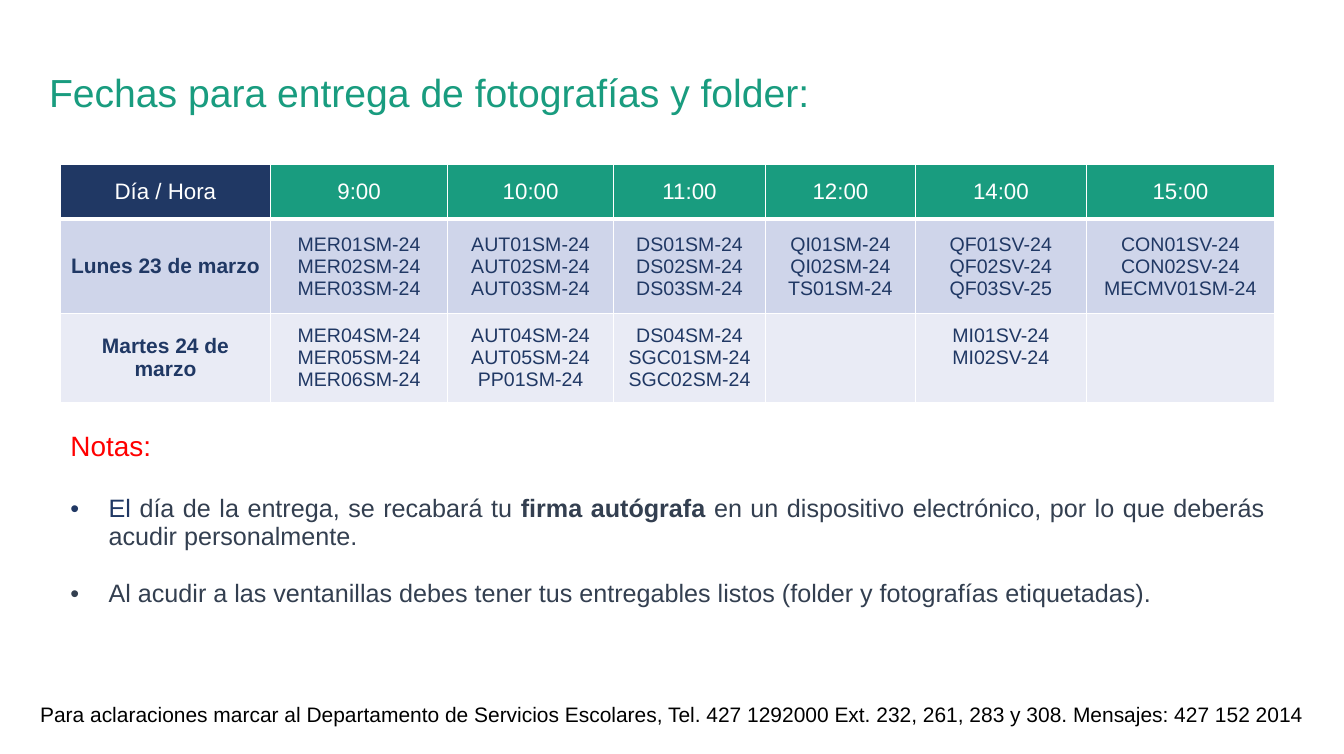
from dataclasses import dataclass

from pptx import Presentation
from pptx.dml.color import RGBColor
from pptx.enum.text import MSO_ANCHOR as Anchor, PP_ALIGN as Align
from pptx.oxml.ns import qn
from pptx.util import Inches, Pt
from lxml.etree import SubElement


@dataclass(frozen=True)
class Theme:
    font: str = "Arial"
    green: str = "199C7F"
    navy: str = "203864"
    slate: str = "333F50"
    red: str = "FF0000"
    black: str = "000000"
    white: str = "FFFFFF"
    bands: tuple = ("CFD5EA", "E9EBF5")
    title: int = 28
    heading: int = 20
    advice: int = 18
    hour: int = 16
    day: int = 15
    group: int = 14
    footer: int = 15


THEME = Theme()

COLUMN_WIDTHS = (2.09, 1.76, 1.65, 1.51, 1.49, 1.7, 1.87)
ROW_HEIGHTS = (0.54, 0.94, 0.88, 2.41)
HOURS = ("Día / Hora", "9:00", "10:00", "11:00", "12:00", "14:00", "15:00")
DAYS = (
    ("Lunes 23 de marzo", (
        ("MER01SM-24", "MER02SM-24", "MER03SM-24"),
        ("AUT01SM-24", "AUT02SM-24", "AUT03SM-24"),
        ("DS01SM-24", "DS02SM-24", "DS03SM-24"),
        ("QI01SM-24", "QI02SM-24", "TS01SM-24"),
        ("QF01SV-24", "QF02SV-24", "QF03SV-25"),
        ("CON01SV-24", "CON02SV-24", "MECMV01SM-24"),
    )),
    ("Martes 24 de marzo", (
        ("MER04SM-24", "MER05SM-24", "MER06SM-24"),
        ("AUT04SM-24", "AUT05SM-24", "PP01SM-24"),
        ("DS04SM-24", "SGC01SM-24", "SGC02SM-24"),
        (),
        ("MI01SV-24", "MI02SV-24"),
        (),
    )),
)
# Each item: space before it, then its pieces of (text, colour, bold)
ADVICE = (
    (23, (
        ("El ", THEME.navy, False),
        ("día de la entrega, se recabará tu ", THEME.slate, False),
        ("firma autógrafa ", THEME.slate, True),
        ("en un dispositivo electrónico, por lo que deberás acudir "
         "personalmente.", THEME.slate, False),
    )),
    (20.5, (
        ("Al acudir a las ventanillas debes tener tus entregables listos "
         "(folder y fotografías etiquetadas).", THEME.slate, False),
    )),
)


def style(paragraph, size, color, bold=False, align=Align.LEFT):
    paragraph.alignment = align
    font = paragraph.font
    font.name, font.size, font.bold = THEME.font, Pt(size), bold
    font.color.rgb = RGBColor.from_string(color)


def add_bullet(paragraph, indent):
    properties = paragraph._p.get_or_add_pPr()
    properties.set("marL", str(indent))
    properties.set("indent", str(-indent))
    SubElement(properties, qn("a:buFont"), typeface=THEME.font)
    SubElement(properties, qn("a:buChar"), char="•")


def add_borders(cell, top=1, bottom=1):
    properties = cell._tc.get_or_add_tcPr()
    for side, width in (("L", 1), ("R", 1), ("T", top), ("B", bottom)):
        line = SubElement(properties, qn(f"a:ln{side}"), w=str(Pt(width)))
        fill = SubElement(line, qn("a:solidFill"))
        SubElement(fill, qn("a:srgbClr"), val=THEME.white)


def fill_cell(cell, lines, fill, size, color, bold=False, top=1, bottom=1):
    add_borders(cell, top, bottom)
    cell.fill.solid()
    cell.fill.fore_color.rgb = RGBColor.from_string(fill)
    cell.vertical_anchor = Anchor.MIDDLE
    frame = cell.text_frame
    frame.text = "\n".join(lines)
    for paragraph in frame.paragraphs:
        style(paragraph, size, color, bold, Align.CENTER)


def write_advice(cell):
    add_borders(cell)
    cell.fill.background()
    cell.margin_top = Inches(0.29)
    frame = cell.text_frame
    heading = frame.paragraphs[0]
    heading.text = "Notas:"
    style(heading, THEME.heading, THEME.red)
    for space, pieces in ADVICE:
        item = frame.add_paragraph()
        item.space_before = Pt(space)
        add_bullet(item, Inches(0.38))
        style(item, THEME.advice, pieces[0][1], align=Align.JUSTIFY)
        for text, color, bold in pieces:
            run = item.add_run()
            run.text = text
            run.font.bold = bold
            run.font.color.rgb = RGBColor.from_string(color)


def add_schedule(slide, left, top, width, height):
    table = slide.shapes.add_table(len(ROW_HEIGHTS), len(COLUMN_WIDTHS),
                                   left, top, width, height).table
    for column, column_width in zip(table.columns, COLUMN_WIDTHS):
        column.width = Inches(column_width)
    for row, row_height in zip(table.rows, ROW_HEIGHTS):
        row.height = Inches(row_height)

    # Hours
    for c, hour in enumerate(HOURS):
        fill_cell(table.cell(0, c), [hour], THEME.green if c else THEME.navy,
                  THEME.hour, THEME.white, bottom=3)

    # Days and their groups
    for r, (day, slots) in enumerate(DAYS, 1):
        band = THEME.bands[r - 1]
        above = 3 if r == 1 else 1
        fill_cell(table.cell(r, 0), [day], band, THEME.day, THEME.navy,
                  bold=True, top=above)
        for c, groups in enumerate(slots, 1):
            cell = table.cell(r, c)
            fill_cell(cell, groups, band, THEME.group, THEME.navy, top=above)
            if len(groups) == 2:  # line up with the three-line cells
                cell.vertical_anchor = Anchor.TOP
                cell.margin_top = Inches(0.11)

    # Advice across the last row
    last = len(ROW_HEIGHTS) - 1
    advice = table.cell(last, 0)
    advice.merge(table.cell(last, len(COLUMN_WIDTHS) - 1))
    write_advice(advice)


def add_line(slide, left, top, width, height, text, size, color,
             align=Align.LEFT, anchor=Anchor.TOP):
    frame = slide.shapes.add_textbox(left, top, width, height).text_frame
    frame.word_wrap = True
    frame.vertical_anchor = anchor
    paragraph = frame.paragraphs[0]
    paragraph.text = text
    style(paragraph, size, color, align=align)
    return paragraph


def main():
    deck = Presentation()
    deck.slide_width, deck.slide_height = Inches(13.36), Inches(7.5)
    slide = deck.slides.add_slide(deck.slide_layouts[6])

    # Schedule with advice
    add_schedule(slide, Inches(0.6), Inches(1.64),
                 Inches(sum(COLUMN_WIDTHS)), Inches(sum(ROW_HEIGHTS)))

    # Title
    title = add_line(slide, Inches(0.39), Inches(0.48), Inches(12.17),
                     Inches(0.93),
                     "Fechas para entrega de fotografías y folder:",
                     THEME.title, THEME.green, anchor=Anchor.MIDDLE)
    title.line_spacing = 0.9

    # Contact line
    add_line(slide, 0, Inches(6.93), deck.slide_width, Inches(0.35),
             "Para aclaraciones marcar al Departamento de Servicios "
             "Escolares, Tel. 427 1292000 Ext. 232, 261, 283 y 308. "
             "Mensajes: 427 152 2014",
             THEME.footer, THEME.black, align=Align.CENTER)

    deck.save("out.pptx")


if __name__ == "__main__":
    main()
